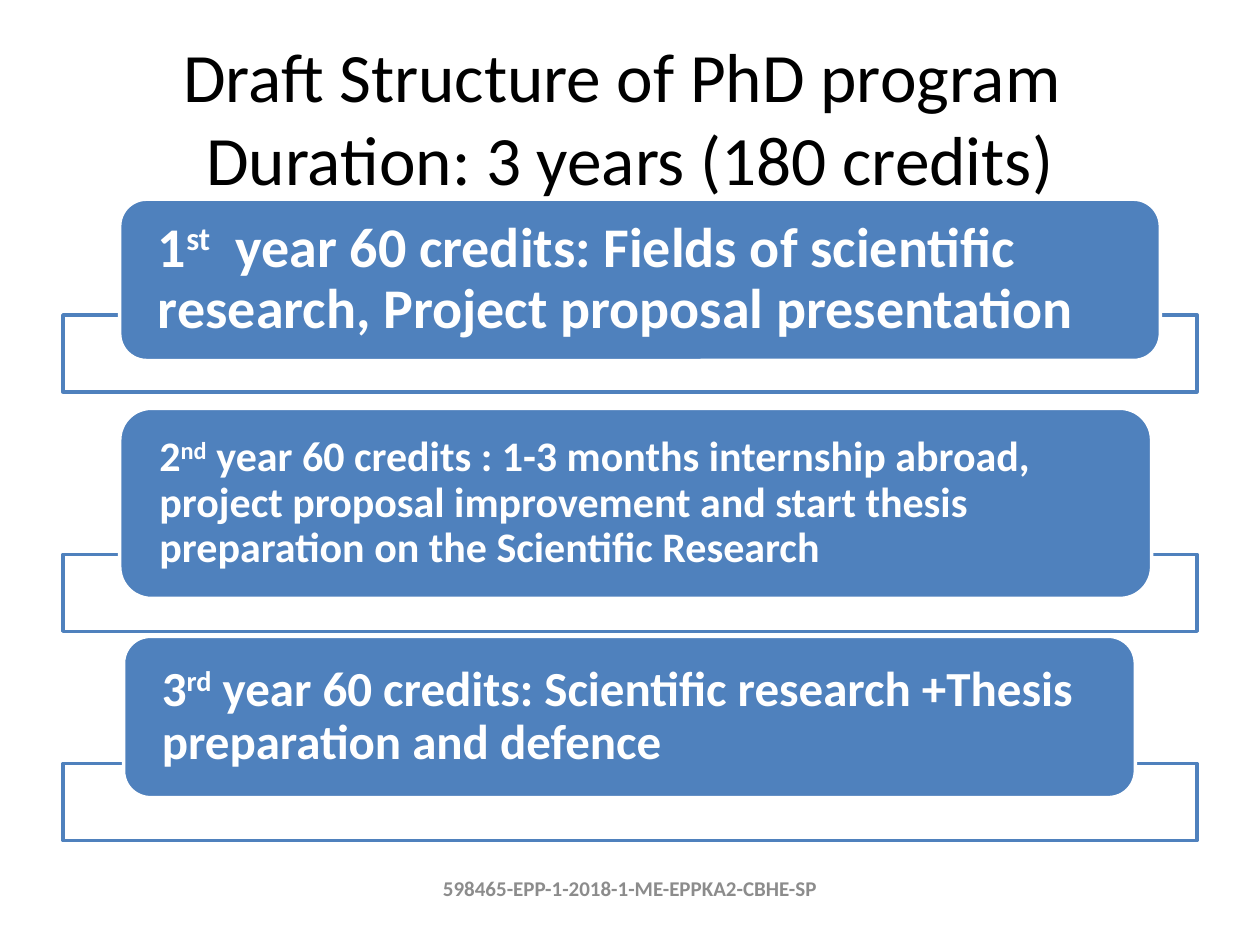
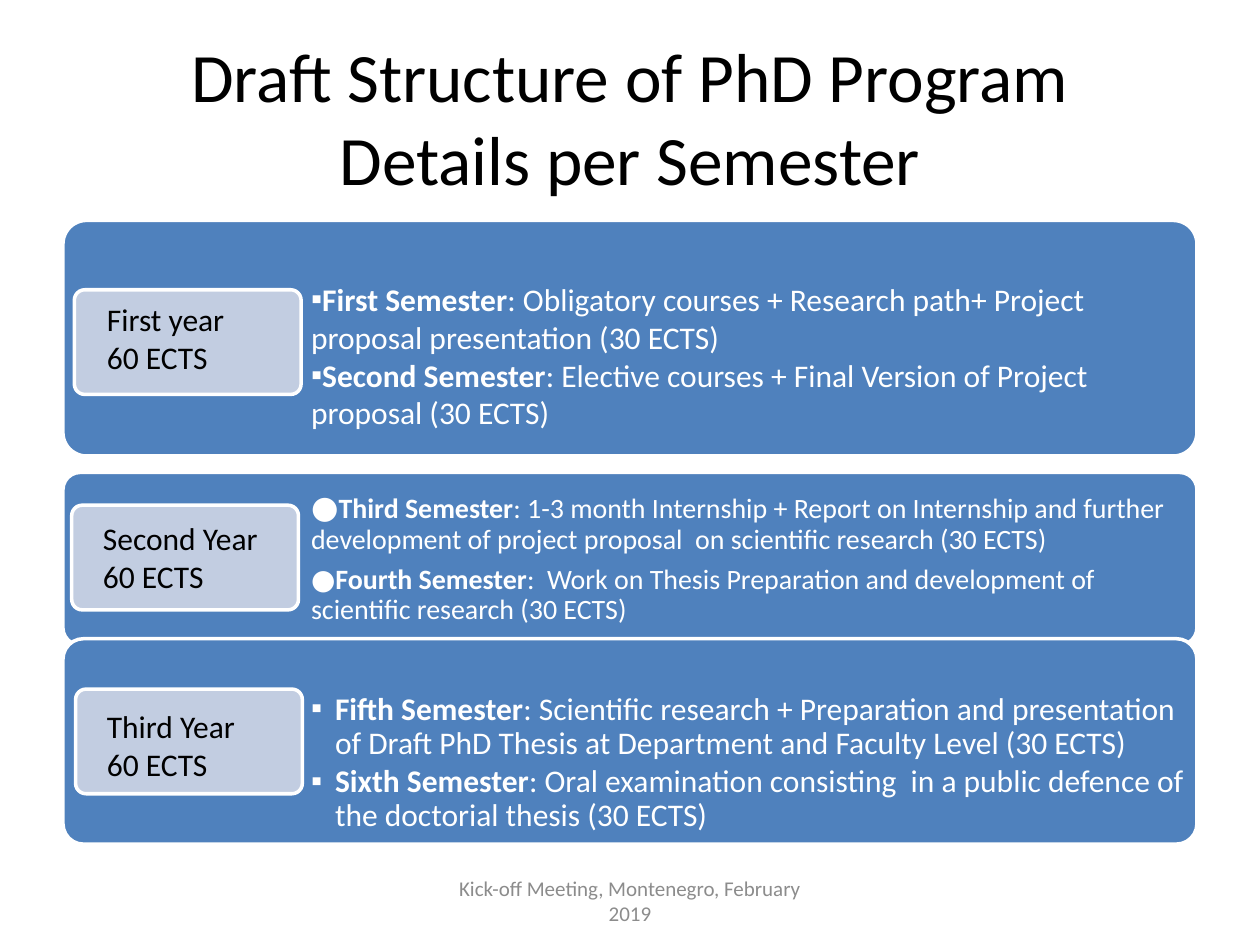
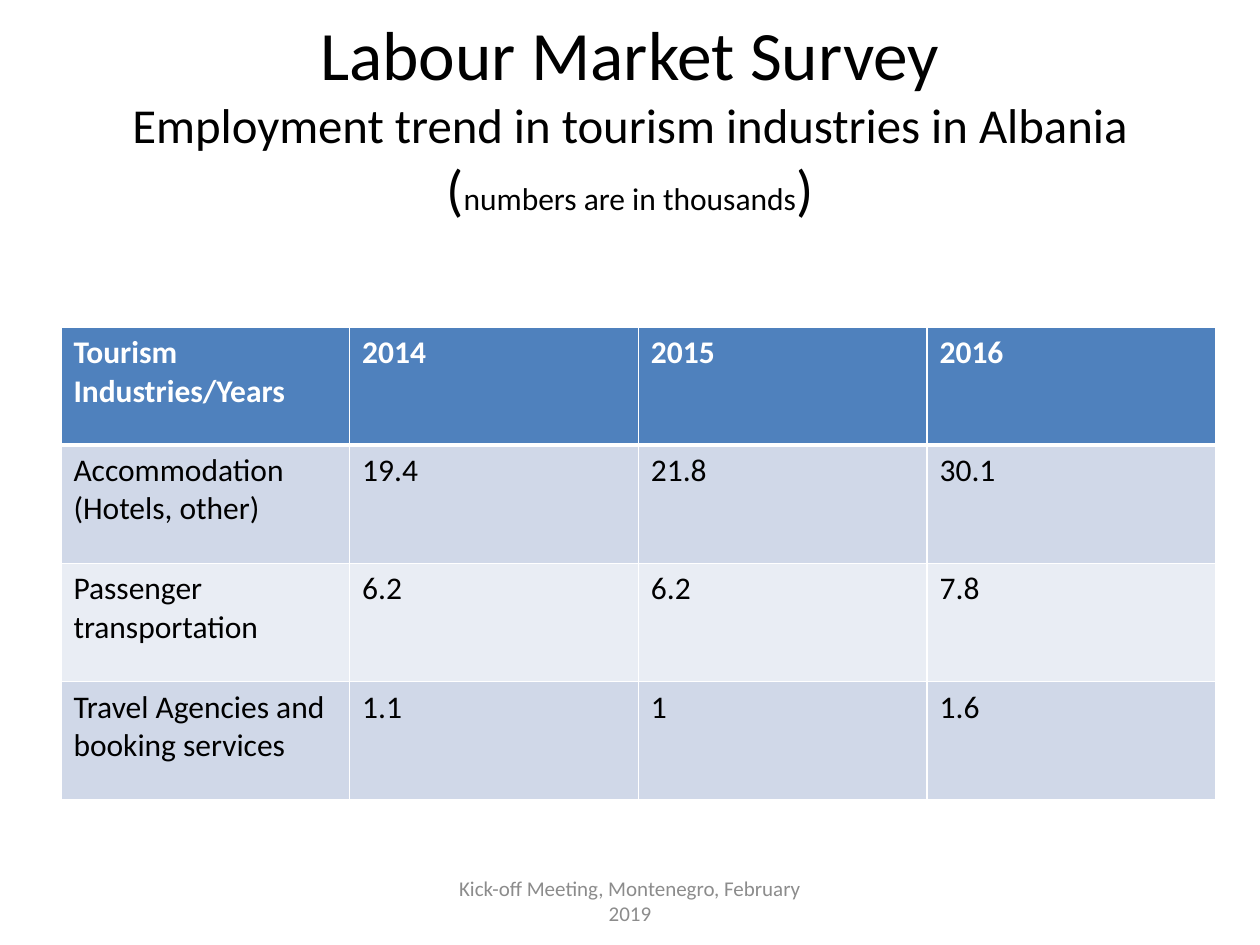
from dataclasses import dataclass
from typing import NamedTuple

from lxml.etree import SubElement
from pptx import Presentation
from pptx.dml.color import RGBColor
from pptx.enum.shapes import MSO_SHAPE as Preset
from pptx.enum.text import MSO_ANCHOR as Anchor, MSO_AUTO_SIZE as AutoSize, PP_ALIGN as Align
from pptx.oxml.ns import qn
from pptx.util import Pt

# Shared look
FONT = "Calibri"
BLUE, WHITE, BLACK = "4F81BD", "FFFFFF", "000000"
BADGE, GREY = "C2CDE1", "8C8C8C"
BAND_DARK, BAND_LIGHT = "D0D8E8", "E9EDF4"
LEFT, WIDTH = 36, 648
TITLE_SIZE = 39.6
MEETING = "Kick-off Meeting, Montenegro, February 2019"


class Box(NamedTuple):
    left: float
    top: float
    width: float
    height: float

    def emu(self) -> list:
        return [Pt(length) for length in self]


@dataclass
class Year:
    ordinal: str
    suffix: str
    plan: str
    size: float
    card: Box
    bracket_top: float


@dataclass
class Semester:
    name: str
    work: str
    dot_size: float = 0


@dataclass
class Panel:
    label: str
    top: float
    height: float
    badge: tuple[float, float]
    label_box: Box
    semesters: list[Semester]
    size: float = 18
    text_top: float = 5
    anchor: Anchor = Anchor.TOP
    line_spacing: float = 1
    space_after: float = 0
    bullet_indent: float | None = None


def rgb(color: str) -> RGBColor:
    return RGBColor.from_string(color)


def write(paragraph, text: str, *, size: float, color: str = BLACK, bold: bool = False,
          font: str = FONT, raised: bool = False) -> None:
    """Add text to a paragraph; a newline becomes a line break."""
    for index, line in enumerate(text.split("\n")):
        if index:
            paragraph.add_line_break()
            line_break = paragraph._p.findall(qn("a:br"))[-1]
            SubElement(line_break, qn("a:rPr"), sz=str(round(size * 100)))
        if not line:
            continue
        run = paragraph.add_run()
        run.text = line
        run.font.size, run.font.bold, run.font.name = Pt(size), bold, font
        run.font.color.rgb = rgb(color)
        if raised:
            run._r.get_or_add_rPr().set("baseline", "30000")


def add_frame(slide, box: Box, anchor: Anchor = Anchor.TOP,
              insets: tuple = (7.2, 3.6, 7.2, 3.6)):
    frame = slide.shapes.add_textbox(*box.emu()).text_frame
    frame.word_wrap = True
    frame.vertical_anchor = anchor
    (frame.margin_left, frame.margin_top,
     frame.margin_right, frame.margin_bottom) = map(Pt, insets)
    return frame


def add_block(slide, preset: Preset, box: Box, fill: str, line: str,
              corner: float | None = None, opacity: int = 100) -> None:
    block = slide.shapes.add_shape(preset, *box.emu())
    block.shadow.inherit = False
    block.fill.solid()
    block.fill.fore_color.rgb = rgb(fill)
    block.line.color.rgb = rgb(line)
    block.line.width = Pt(2)
    if corner is not None:
        block.adjustments[0] = corner
    if opacity < 100:
        tint = block._element.spPr.find(qn("a:solidFill"))[0]
        SubElement(tint, qn("a:alpha"), val=str(opacity * 1000))


def add_bullet(paragraph, indent: float) -> None:
    properties = paragraph._p.get_or_add_pPr()
    properties.set("marL", str(Pt(indent)))
    properties.set("indent", str(-Pt(indent)))
    SubElement(properties, qn("a:buFont"), typeface="Arial")
    SubElement(properties, qn("a:buChar"), char="▪")


def start_slide(deck, title_parts: list[tuple[str, float]], footer: str,
                footer_bold: bool = False, footer_bottom: float = 3.6):
    """Add a slide with its title and footer."""
    slide = deck.slides.add_slide(deck.slide_layouts[5])
    title = slide.shapes.title
    title.left, title.top, title.width, title.height = Box(LEFT, 21.6, WIDTH, 90).emu()
    frame = title.text_frame
    frame.auto_size = AutoSize.NONE
    frame.vertical_anchor = Anchor.MIDDLE
    heading = frame.paragraphs[0]
    heading.alignment = Align.CENTER
    for text, size in title_parts:
        write(heading, text, size=size)

    note = add_frame(slide, Box(246, 500.4, 228, 28.8), Anchor.MIDDLE,
                     (7.2, 3.6, 7.2, footer_bottom)).paragraphs[0]
    note.alignment = Align.CENTER
    write(note, footer, size=12, color=GREY, bold=footer_bold)
    return slide


def add_year(slide, year: Year) -> None:
    add_block(slide, Preset.RECTANGLE, Box(LEFT, year.bracket_top, WIDTH, 44),
              WHITE, BLUE, opacity=90)
    card = year.card
    add_block(slide, Preset.ROUNDED_RECTANGLE, card, BLUE, WHITE)
    edge = card.height * 0.05
    inner = Box(card.left + edge, card.top + edge,
                card.width - 2 * edge, card.height - 2 * edge)
    plan = add_frame(slide, inner, Anchor.MIDDLE, (17.3, 0, 17.3, 0)).paragraphs[0]
    plan.line_spacing = 0.9
    for text, raised in ((year.ordinal, False), (year.suffix, True), (year.plan, False)):
        write(plan, text, size=year.size, color=WHITE, bold=True, raised=raised)


def add_panel(slide, panel: Panel) -> None:
    add_block(slide, Preset.ROUNDED_RECTANGLE, Box(LEFT, panel.top, WIDTH, panel.height),
              BLUE, WHITE, corner=0.1)
    frame = add_frame(slide, Box(172.8, panel.top, 511.2, panel.height), panel.anchor,
                      (5, panel.text_top, 5, 5))
    for index, semester in enumerate(panel.semesters):
        item = frame.add_paragraph() if index else frame.paragraphs[0]
        item.line_spacing = panel.line_spacing
        item.space_after = Pt(panel.space_after)
        if panel.bullet_indent is not None:
            add_bullet(item, panel.bullet_indent)
        if semester.dot_size:
            write(item, "●", size=semester.dot_size, color=WHITE, bold=True, font="Comic Neue")
        write(item, semester.name, size=panel.size, color=WHITE, bold=True)
        write(item, semester.work, size=panel.size, color=WHITE)

    add_block(slide, Preset.ROUNDED_RECTANGLE, Box(*panel.badge, 129.6, 59.8),
              BADGE, WHITE, corner=0.1)
    label = add_frame(slide, panel.label_box)
    write(label.paragraphs[0], panel.label, size=18)
    write(label.add_paragraph(), "60 ECTS", size=18)


def format_cell(cell, text: str, fill: str, color: str, bold: bool,
                top: float, bottom: float) -> None:
    properties = cell._tc.get_or_add_tcPr()
    for side, width in (("L", 1), ("R", 1), ("T", top), ("B", bottom)):
        border = SubElement(properties, qn(f"a:ln{side}"), w=str(Pt(width)))
        SubElement(SubElement(border, qn("a:solidFill")), qn("a:srgbClr"), val=WHITE)
    cell.fill.solid()
    cell.fill.fore_color.rgb = rgb(fill)
    write(cell.text_frame.paragraphs[0], text, size=18, color=color, bold=bold)


def add_employment_table(slide, rows: list[tuple[str, ...]]) -> None:
    box = Box(34.8, 187.2, 660, 270)
    table = slide.shapes.add_table(len(rows), len(rows[0]), *box.emu()).table
    for column in table.columns:
        column.width = Pt(box.width / len(rows[0]))
    for number, values in enumerate(rows):
        header = number == 0
        table.rows[number].height = Pt(67 if header else 67.7)
        fill = BLUE if header else (BAND_DARK if number % 2 else BAND_LIGHT)
        for column, value in enumerate(values):
            format_cell(table.cell(number, column), value, fill,
                        WHITE if header else BLACK, header,
                        top=3 if number == 1 else 1, bottom=3 if header else 1)


YEARS = [
    Year("1", "st", "  year 60 credits: Fields of scientific research, "
         "Project proposal presentation", 32, Box(68.4, 113.8, 594.7, 92.2), 180),
    Year("2", "nd", " year 60 credits : 1-3 months internship abroad, project proposal "
         "improvement and start thesis preparation on the Scientific Research",
         24, Box(68.4, 233.3, 589.7, 108.7), 316.8),
    Year("3", "rd", " year 60 credits: Scientific research +Thesis preparation and defence",
         28, Box(70.6, 363.6, 578.2, 92.2), 436.3),
]

PANELS = [
    Panel("First year", 126, 134.6, (42.5, 165.6), Box(54, 167.8, 118.8, 51.1), [
        Semester("First Semester", ": Obligatory courses + Research path+ "
                 "Project proposal presentation (30 ECTS)"),
        Semester("Second Semester", ": Elective courses + Final Version of "
                 "Project proposal (30 ECTS)"),
    ], text_top=34, bullet_indent=0),
    Panel("Second Year", 270, 98.6, (41, 288.7), Box(51.8, 293, 113, 51.1), [
        Semester("Third Semester", ": 1-3 month Internship + Report on Internship and further "
                 "development of project proposal  on scientific research (30 ECTS)", 18),
        Semester("Fourth Semester", ":  Work on Thesis Preparation and development of "
                 "scientific research (30 ECTS)", 16),
    ], size=16, anchor=Anchor.MIDDLE, line_spacing=0.9, space_after=5.6),
    Panel("Third Year", 365, 117.4, (43.2, 393.8), Box(54, 400.3, 113, 51.1), [
        Semester("Fifth Semester", ": Scientific research + Preparation and presentation of "
                 "Draft PhD Thesis at Department and Faculty Level (30 ECTS)"),
        Semester("Sixth Semester", ": Oral examination consisting  in a public defence of "
                 "the doctorial thesis (30 ECTS)"),
    ], text_top=31, line_spacing=0.9, space_after=2.7, bullet_indent=13.7),
]

EMPLOYMENT = [
    ("Tourism Industries/Years", "2014", "2015", "2016"),
    ("Accommodation (Hotels, other)", "19.4", "21.8", "30.1"),
    ("Passenger transportation", "6.2", "6.2", "7.8"),
    ("Travel Agencies and booking services", "1.1", "1", "1.6"),
]


def main() -> None:
    deck = Presentation()
    deck.slide_width, deck.slide_height = Pt(720), Pt(540)

    # Three years of the program
    structure = start_slide(
        deck, [("Draft Structure of PhD program \nDuration: 3 years (180 credits)", TITLE_SIZE)],
        "598465-EPP-1-2018-1-ME-EPPKA2-CBHE-SP", footer_bold=True, footer_bottom=18)
    for year in YEARS:
        add_year(structure, year)

    # Semesters of each year
    details = start_slide(
        deck, [("Draft Structure of PhD Program\nDetails per Semester", TITLE_SIZE)], MEETING)
    for panel in PANELS:
        add_panel(details, panel)

    # Employment in tourism
    survey = start_slide(deck, [
        ("Labour Market Survey\n", TITLE_SIZE),
        ("Employment trend in tourism industries in Albania\n", 27.9),
        ("(", 32.4), ("numbers are in thousands", 18), (")", 32.4),
    ], MEETING)
    add_employment_table(survey, EMPLOYMENT)

    deck.save("out.pptx")


if __name__ == "__main__":
    main()
